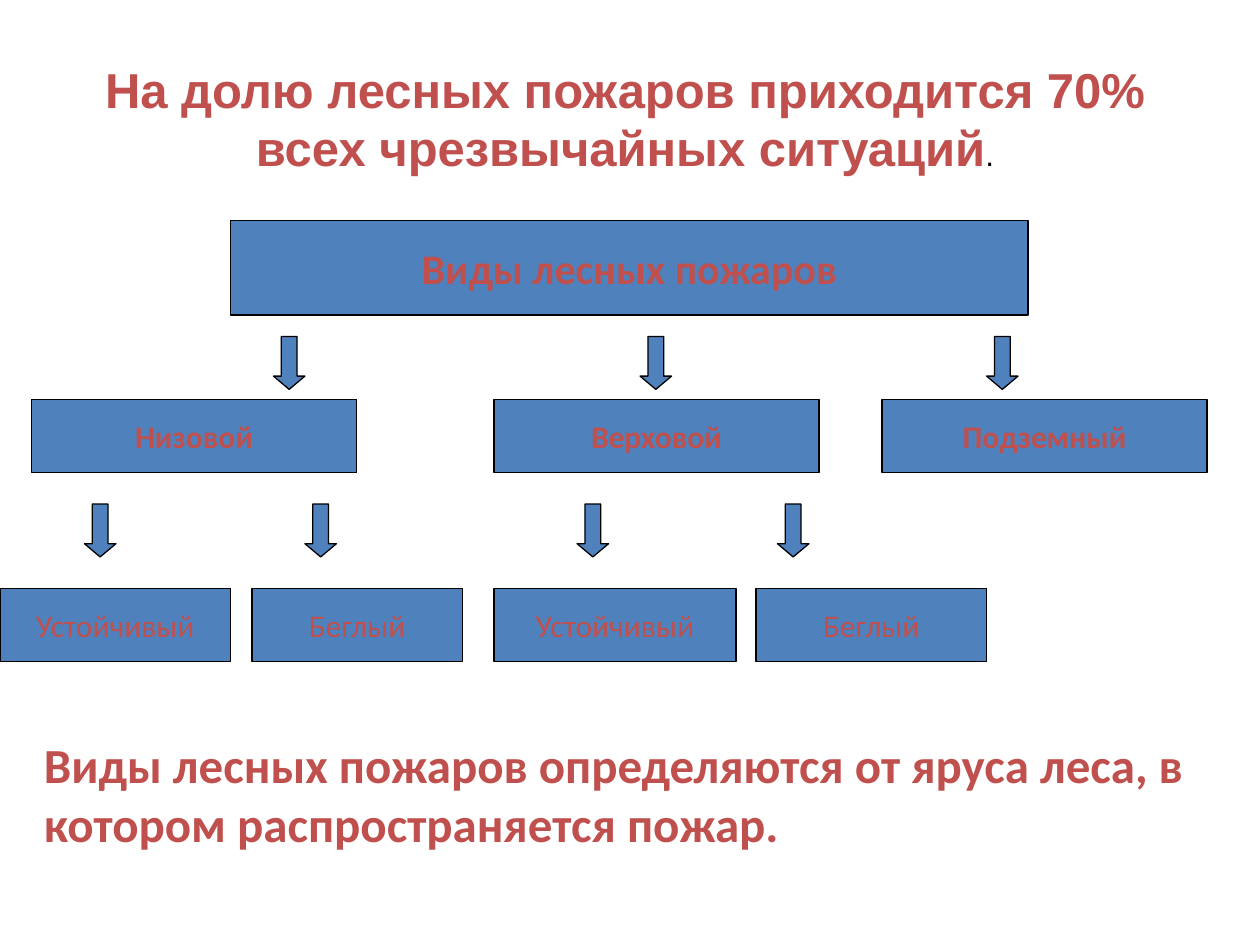
from dataclasses import dataclass

from pptx import Presentation
from pptx.dml.color import RGBColor
from pptx.enum.shapes import MSO_SHAPE as Shape
from pptx.enum.text import MSO_ANCHOR as Anchor, PP_ALIGN as Align
from pptx.util import Inches, Pt


@dataclass(frozen=True)
class Theme:
    accent: RGBColor = RGBColor(0xC0, 0x50, 0x4D)
    fill: RGBColor = RGBColor(0x4F, 0x81, 0xBD)
    black: RGBColor = RGBColor(0, 0, 0)
    heading_font: str = "Arial"
    body_font: str = "Calibri"
    heading_size: Pt = Pt(28)
    root_size: Pt = Pt(24)
    node_size: Pt = Pt(18)
    outline: Pt = Pt(0.75)


theme = Theme()


def add_block(kind, left, top, width, height):
    block = slide.shapes.add_shape(
        kind, Inches(left), Inches(top), Inches(width), Inches(height))
    block.shadow.inherit = False
    block.fill.solid()
    block.fill.fore_color.rgb = theme.fill
    block.line.color.rgb = theme.black
    block.line.width = theme.outline
    return block


def set_font(font, name, size, bold=True, color=theme.accent):
    font.name = name
    font.size = size
    font.bold = bold
    font.color.rgb = color


prs = Presentation()
prs.slide_width, prs.slide_height = Inches(10), Inches(7.5)
slide = prs.slides.add_slide(prs.slide_layouts[6])

# Conclusion
conclusion = slide.shapes.add_textbox(
    Inches(0.25), Inches(5.67), Inches(9.75), Inches(1.25)).text_frame
conclusion.word_wrap = True
conclusion.vertical_anchor = Anchor.MIDDLE
statement = conclusion.paragraphs[0]
statement.text = ("Виды лесных пожаров определяются от яруса леса, "
                  "в котором распространяется пожар.")
set_font(statement.font, theme.body_font, theme.heading_size)

# Levels of the tree: top, height, text size, bold, (label, left, width)
levels = [
    (1.75, 0.75, theme.root_size, True, [("Виды лесных пожаров", 1.83, 6.33)]),
    (3.17, 0.58, theme.node_size, True, [
        ("Низовой", 0.25, 2.58),
        ("Верховой", 3.92, 2.58),
        ("Подземный", 7, 2.58),
    ]),
    (4.67, 0.58, theme.node_size, False, [
        ("Устойчивый", 0, 1.83),
        ("Беглый", 2, 1.67),
        ("Устойчивый", 3.92, 1.92),
        ("Беглый", 6, 1.83),
    ]),
]
for top, height, size, bold, nodes in levels:
    for label, left, width in nodes:
        frame = add_block(Shape.FLOWCHART_PROCESS, left, top, width, height).text_frame
        frame.word_wrap = False
        frame.vertical_anchor = Anchor.MIDDLE
        caption = frame.paragraphs[0]
        caption.text = label
        caption.alignment = Align.CENTER
        set_font(caption.font, theme.body_font, size, bold)

# Arrows between the levels
for top, lefts in [(2.67, (2.17, 5.08, 7.83)), (4, (0.67, 2.42, 4.58, 6.17))]:
    for left in lefts:
        arrow = add_block(Shape.DOWN_ARROW, left, top, 0.25, 0.42)
        arrow.adjustments[0] = 0.5
        arrow.adjustments[1] = 0.42

# Heading
heading = slide.shapes.add_textbox(
    Inches(0.5), Inches(0.42), Inches(8.92), Inches(1.49)).text_frame
heading.word_wrap = True
headline = heading.paragraphs[0]
headline.alignment = Align.CENTER
for text, size, bold, color in [
    ("На долю лесных пожаров приходится 70% всех чрезвычайных ситуаций",
     theme.heading_size, True, theme.accent),
    (".", theme.node_size, False, theme.black),
]:
    run = headline.add_run()
    run.text = text
    set_font(run.font, theme.heading_font, size, bold, color)

prs.save("out.pptx")
